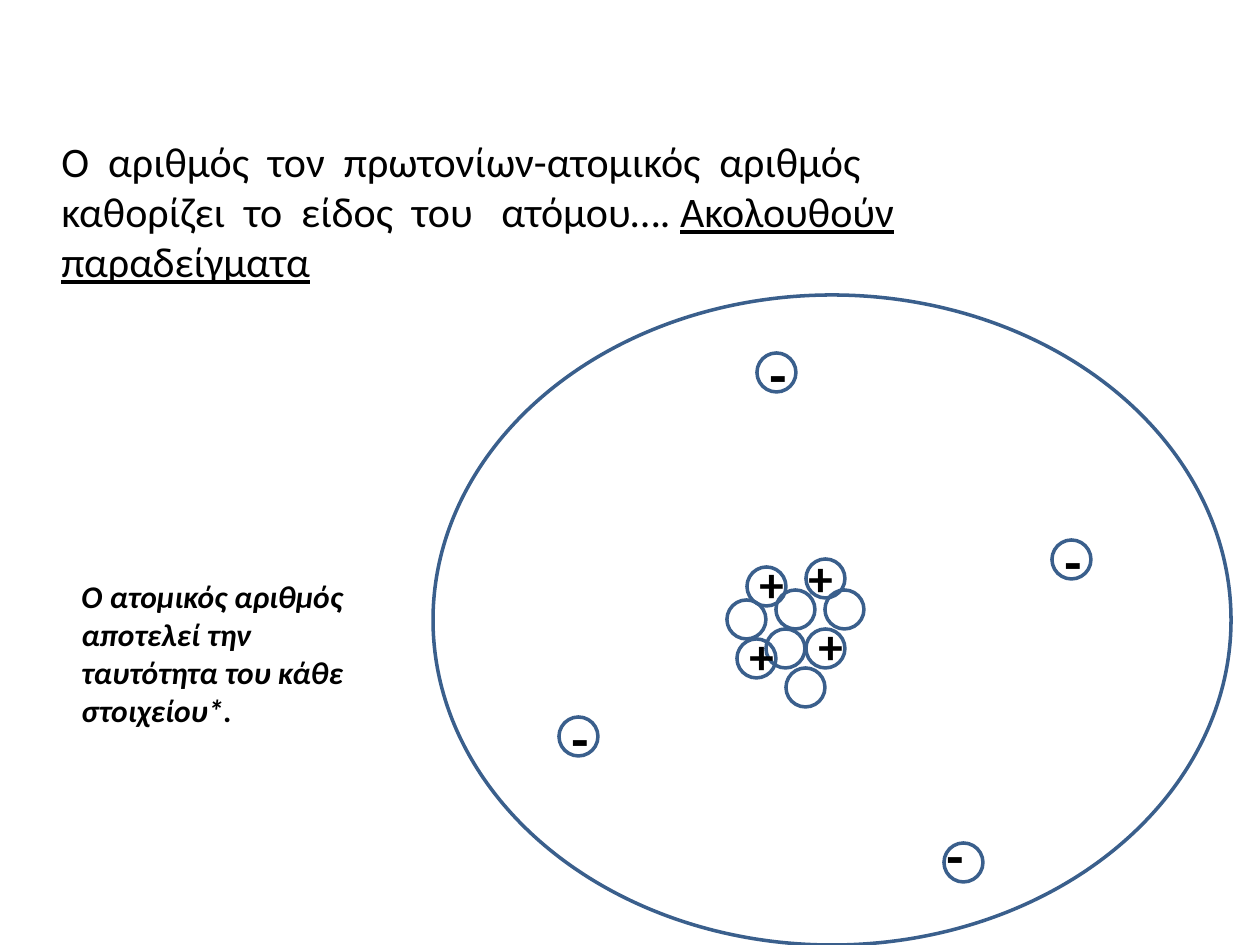
from dataclasses import dataclass

from pptx import Presentation
from pptx.dml.color import RGBColor
from pptx.enum.shapes import MSO_SHAPE
from pptx.enum.text import MSO_AUTO_SIZE
from pptx.slide import Slide
from pptx.util import Emu, Pt

PIXELS_PER_INCH = 126
PARTICLE_SIZE = 39


@dataclass(frozen=True)
class Theme:
    """Colours, font and type sizes in points."""

    outline: RGBColor = RGBColor(0x3A, 0x5F, 0x8C)
    text: RGBColor = RGBColor(0, 0, 0)
    font: str = "Calibri"
    line_width: int = 2
    statement: int = 24
    note: int = 18
    plus: int = 28
    minus: int = 32


@dataclass(frozen=True)
class Box:
    """A rectangle in px."""

    left: int
    top: int
    width: int
    height: int


@dataclass(frozen=True)
class Particle:
    """A particle at its top left corner, with the shift of its charge sign."""

    left: int
    top: int
    shift_left: int = 0
    shift_top: int = -20


@dataclass(frozen=True)
class Charge:
    """The sign shown on a kind of particle."""

    sign: str
    size: int
    width: int
    height: int


@dataclass(frozen=True)
class Run:
    """A piece of text and its font values."""

    text: str
    font: dict


THEME = Theme()
ELECTRON_CLOUD = Box(433, 295, 798, 650)
ELECTRON_CHARGE = Charge("-", THEME.minus, 49, 81)
PROTON_CHARGE = Charge("+", THEME.plus, 29, 72)
ELECTRONS = (
    Particle(1052, 540),
    Particle(559, 717),
    Particle(757, 353),
    Particle(944, 843, -10, -29),
)
PROTONS = (
    Particle(806, 629),
    Particle(806, 559, -10, -18),
    Particle(737, 639),
    Particle(747, 567),
)
NEUTRONS = (
    Particle(766, 629),
    Particle(825, 590),
    Particle(776, 590),
    Particle(727, 600),
    Particle(786, 668),
)
STATEMENT = (
    Run(
        "Ο  αριθμός  τον  πρωτονίων-ατομικός  αριθμός  "
        "καθορίζει  το  είδος  του   ατόμου…. ",
        {"size": Pt(THEME.statement)},
    ),
    Run("Ακολουθούν παραδείγματα", {"size": Pt(THEME.statement), "underline": True}),
)
NOTE = (
    Run(
        "Ο ατομικός αριθμός αποτελεί την ταυτότητα του κάθε στοιχείου*.",
        {"size": Pt(THEME.note), "bold": True, "italic": True},
    ),
)


def to_emu(pixels: int) -> Emu:
    """Turn px into EMU."""
    return Emu(round(pixels * 914400 / PIXELS_PER_INCH))


def place(box: Box) -> tuple[Emu, ...]:
    """Give the position and size of a box in EMU."""
    return tuple(map(to_emu, (box.left, box.top, box.width, box.height)))


def draw_ellipse(slide: Slide, box: Box) -> None:
    """Draw an outlined ellipse without fill."""
    shape = slide.shapes.add_shape(MSO_SHAPE.OVAL, *place(box))
    shape.shadow.inherit = False
    shape.fill.background()
    shape.line.color.rgb = THEME.outline
    shape.line.width = Pt(THEME.line_width)


def draw_text(slide: Slide, box: Box, runs: tuple[Run, ...]) -> None:
    """Draw one paragraph made of formatted runs."""
    frame = slide.shapes.add_textbox(*place(box)).text_frame
    frame.word_wrap = True
    frame.auto_size = MSO_AUTO_SIZE.SHAPE_TO_FIT_TEXT
    paragraph = frame.paragraphs[0]
    for piece in runs:
        run = paragraph.add_run()
        run.text = piece.text
        run.font.color.rgb = THEME.text
        for name, value in {"name": THEME.font, **piece.font}.items():
            setattr(run.font, name, value)


def draw_particle(slide: Slide, particle: Particle) -> None:
    """Draw the circle of a particle."""
    draw_ellipse(slide, Box(particle.left, particle.top, PARTICLE_SIZE, PARTICLE_SIZE))


def draw_charge(slide: Slide, particle: Particle, charge: Charge) -> None:
    """Draw the charge sign of a particle."""
    box = Box(
        particle.left + particle.shift_left,
        particle.top + particle.shift_top,
        charge.width,
        charge.height,
    )
    draw_text(slide, box, (Run(charge.sign, {"size": Pt(charge.size), "bold": True}),))


def main() -> None:
    """Build the atom slide and save it."""
    presentation = Presentation()
    presentation.slide_width = to_emu(1260)
    presentation.slide_height = to_emu(945)
    slide = presentation.slides.add_slide(presentation.slide_layouts[6])
    draw_ellipse(slide, ELECTRON_CLOUD)
    for particle in ELECTRONS + NEUTRONS + PROTONS:
        draw_particle(slide, particle)
    for particles, charge in ((PROTONS, PROTON_CHARGE), (ELECTRONS, ELECTRON_CHARGE)):
        for particle in particles:
            draw_charge(slide, particle, charge)
    draw_text(slide, Box(49, 129, 867, 217), STATEMENT)
    draw_text(slide, Box(69, 571, 305, 165), NOTE)
    presentation.save("out.pptx")


if __name__ == "__main__":
    main()
